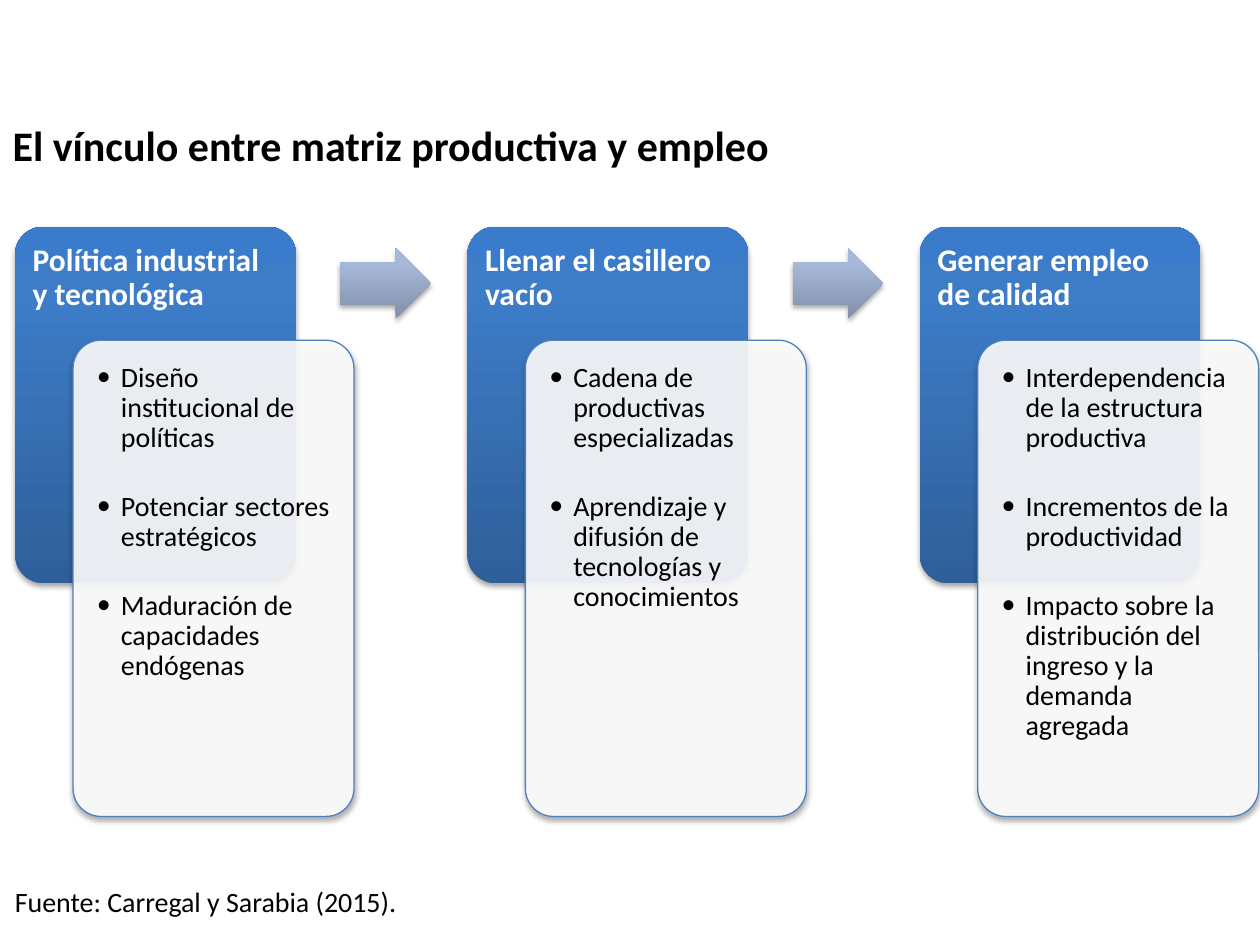
"""Build the slide on the link between productive matrix and employment."""
from dataclasses import dataclass

from lxml.etree import SubElement
from pptx import Presentation
from pptx.dml.color import RGBColor
from pptx.enum.shapes import MSO_SHAPE as Kind
from pptx.enum.text import MSO_ANCHOR as Anchor, PP_ALIGN as Align
from pptx.oxml.ns import qn
from pptx.util import Inches, Pt

Stops = list[tuple[int, str]]
Box = tuple[float, float, float, float]

BLUE: Stops = [(0, "2F5F99"), (80, "3D7CC7"), (100, "3A7CCB")]
GREY: Stops = [(0, "818FA8"), (80, "A7B9DA"), (100, "A7BADC")]
LEFT, TOP, STEP = 0.12, 1.8, 3.59


@dataclass
class Stage:
    head: str
    items: list[str]


STAGES = [
    Stage("Política industrial y tecnológica", [
        "Diseño institucional de políticas",
        "Potenciar sectores estratégicos",
        "Maduración de capacidades endógenas",
    ]),
    Stage("Llenar el casillero vacío", [
        "Cadena de productivas especializadas",
        "Aprendizaje y difusión de tecnologías y conocimientos",
    ]),
    Stage("Generar empleo de calidad", [
        "Interdependencia de la estructura productiva",
        "Incrementos de la productividad",
        "Impacto sobre la distribución del ingreso y la demanda agregada",
    ]),
]


def color(code: str) -> RGBColor:
    """Turn a hex string into a colour."""
    return RGBColor.from_string(code)


def style(para, size: int, code: str = "000000", bold: bool = False) -> None:
    """Format the runs of a paragraph."""
    for run in para.runs:
        font = run.font
        font.name, font.size, font.bold = "Calibri", Pt(size), bold
        font.color.rgb = color(code)


def add_shape(slide, kind, box: Box, adjs: list[float]):
    """Add a preset shape with a soft shadow below it."""
    shape = slide.shapes.add_shape(kind, *map(Inches, box))
    for i, value in enumerate(adjs):
        shape.adjustments[i] = value
    shape.shadow.inherit = False
    effect = shape._element.spPr.find(qn("a:effectLst"))
    shade = SubElement(effect, qn("a:outerShdw"), blurRad=str(Pt(3.1)),
                       dist=str(Pt(1.8)), dir="5400000", rotWithShape="0")
    tint = SubElement(shade, qn("a:srgbClr"), val="000000")
    SubElement(tint, qn("a:alpha"), val="35000")
    return shape


def add_blend(slide, kind, box: Box, adjs: list[float], stops: Stops) -> None:
    """Add a shape whose gradient runs from bottom to top."""
    shape = add_shape(slide, kind, box, adjs)
    shape.line.fill.background()
    shape.fill.gradient()
    shape.fill.gradient_angle = 90
    group = shape._element.spPr.find(".//" + qn("a:gsLst"))
    for old in list(group):
        group.remove(old)
    for spot, code in stops:
        stop = SubElement(group, qn("a:gs"), pos=str(spot * 1000))
        SubElement(stop, qn("a:srgbClr"), val=code)


def add_card(slide, box: Box) -> None:
    """Add a translucent white card with a blue outline."""
    card = add_shape(slide, Kind.ROUNDED_RECTANGLE, box, [0.1])
    card.fill.solid()
    card.fill.fore_color.rgb = color("FFFFFF")
    tint = card._element.spPr.find(qn("a:solidFill")).find(qn("a:srgbClr"))
    SubElement(tint, qn("a:alpha"), val="90000")
    card.line.color.rgb = color("4F81BD")
    card.line.width = Pt(0.75)


def add_text(slide, box: Box, pad: float = 0.1, foot: float = 0.05):
    """Add a wrapping text box and return its frame."""
    frame = slide.shapes.add_textbox(*map(Inches, box)).text_frame
    frame.word_wrap = True
    frame.margin_left = frame.margin_right = Inches(pad)
    frame.margin_top = frame.margin_bottom = Inches(foot)
    return frame


def add_list(slide, box: Box, items: list[str]) -> None:
    """Add a bulleted list with wide gaps between its items."""
    frame = add_text(slide, box, 0.12, 0.12)
    for i, item in enumerate(items):
        para = frame.paragraphs[0] if i == 0 else frame.add_paragraph()
        para.text = item
        para.line_spacing = 0.9
        if i:
            para.space_before = Pt(22)
        props = para._p.get_or_add_pPr()
        props.set("marL", str(Inches(0.19)))
        props.set("indent", str(Inches(-0.19)))
        SubElement(props, qn("a:buFont"), typeface="Calibri")
        SubElement(props, qn("a:buChar"), char="•")
        style(para, 16)


def add_stage(slide, left: float, stage: Stage) -> None:
    """Draw one stage: blue panel, heading, card and list."""
    add_blend(slide, Kind.ROUNDED_RECTANGLE, (left, TOP, 2.23, 2.83), [0.1], BLUE)
    frame = add_text(slide, (left, TOP, 2.23, 0.89), 0.14, 0.07)
    frame.margin_top = Inches(0.14)
    frame.text = stage.head
    frame.paragraphs[0].line_spacing = 0.9
    style(frame.paragraphs[0], 18, "FFFFFF", True)
    add_card(slide, (left + 0.46, TOP + 0.9, 2.23, 3.78))
    add_list(slide, (left + 0.53, TOP + 0.96, 2.1, 3.65), stage.items)


def set_title(slide, text: str) -> None:
    """Place and format the title."""
    title = slide.shapes.title
    title.left, title.top, title.width, title.height = map(Inches, (0, 0.52, 10, 1.25))
    frame = title.text_frame
    frame.text = text
    frame.vertical_anchor = Anchor.MIDDLE
    frame.paragraphs[0].alignment = Align.LEFT
    style(frame.paragraphs[0], 24, bold=True)


def main() -> None:
    """Build and save the slide."""
    deck = Presentation()
    deck.slide_width, deck.slide_height = Inches(10), Inches(7.5)
    slide = deck.slides.add_slide(deck.slide_layouts[5])
    set_title(slide, "El vínculo entre matriz productiva y empleo")
    for i, stage in enumerate(STAGES):
        left = LEFT + i * STEP
        if i:
            box = (left - 1.01, TOP + 0.17, 0.72, 0.56)
            add_blend(slide, Kind.RIGHT_ARROW, box, [0.6, 0.5], GREY)
        add_stage(slide, left, stage)
    frame = add_text(slide, (0.02, 6.97, 6.14, 0.37))
    frame.text = "Fuente: Carregal y Sarabia (2015)."
    style(frame.paragraphs[0], 16)
    deck.save("out.pptx")


if __name__ == "__main__":
    main()
